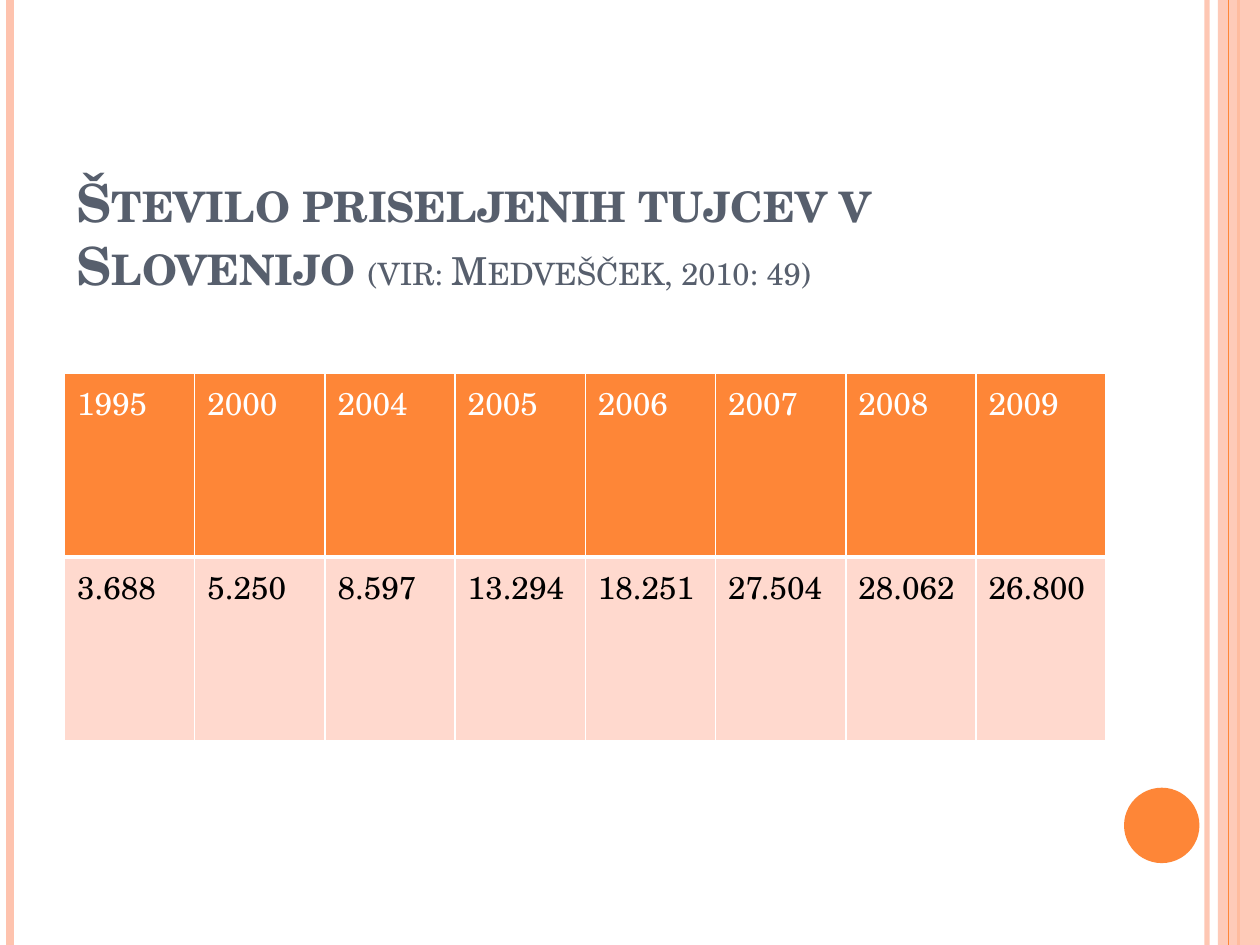
"""Build a slide with a table of foreigners who moved to Slovenia by year."""
import pptx
import pptx.dml.color
import pptx.enum.shapes
import pptx.enum.text
import pptx.oxml.ns
import pptx.util
from lxml import etree

Cm, Pt = pptx.util.Cm, pptx.util.Pt
RGBColor = pptx.dml.color.RGBColor
SHAPE = pptx.enum.shapes.MSO_SHAPE
qn = pptx.oxml.ns.qn

FONT = "TeX Gyre Schola"
ORANGE = RGBColor(0xFE, 0x86, 0x37)
PEACH = RGBColor(0xFE, 0xC3, 0xAE)
PALE = RGBColor(0xFF, 0xD9, 0xCE)
SLATE = RGBColor(0x57, 0x5F, 0x6D)
WHITE = RGBColor(0xFF, 0xFF, 0xFF)
BLACK = RGBColor(0, 0, 0)

TITLE = [
    ("Število priseljenih tujcev v \vSlovenijo ", 30, True),
    ("(vir: Medvešček, 2010: 49)", 22, False),
]
IMMIGRANTS = [
    ("1995", "3.688"), ("2000", "5.250"), ("2004", "8.597"), ("2005", "13.294"),
    ("2006", "18.251"), ("2007", "27.504"), ("2008", "28.062"), ("2009", "26.800"),
]
ROW_STYLES = [(ORANGE, WHITE, 3), (PALE, BLACK, 1)]
BACK_STRIPES = [(24.33, PEACH, 3, 93), (0.2, PEACH, 4.5, 100), (24.97, ORANGE, 1.5, 100)]
FRONT_STRIPES = [(24.77, ORANGE, 0.75, 100)]

WIDTH, HEIGHT = 25.4, 19.05
LEFT = 1.3
TABLE_TOP, TABLE_WIDTH, TABLE_HEIGHT = 7.53, 21, 7.4


def set_alpha(sp, percent):
    for color in sp._element.spPr.iter(qn("a:srgbClr")):
        etree.SubElement(color, qn("a:alpha"), val=str(percent * 1000))


def add_stripe(s, x, color, weight, alpha):
    sp = s.shapes.add_connector(
        pptx.enum.shapes.MSO_CONNECTOR.STRAIGHT, Cm(x), 0, Cm(x), Cm(HEIGHT))
    sp.line.color.rgb = color
    sp.line.width = Pt(weight)
    if alpha < 100:
        set_alpha(sp, alpha)
    etree.SubElement(sp._element.spPr, qn("a:effectLst"))


def add_filled(s, kind, x, y, w, h, color):
    sp = s.shapes.add_shape(kind, Cm(x), Cm(y), Cm(w), Cm(h))
    sp.shadow.inherit = False
    sp.fill.solid()
    sp.fill.fore_color.rgb = color
    sp.line.fill.background()
    return sp


def add_run(p, text, size, color, bold=False):
    start, *rest = text.split("\v")
    runs = [p.add_run()]
    runs[0].text = start
    for part in rest:
        p.add_line_break()
        runs.append(p.add_run())
        runs[-1].text = part
    for r in runs:
        r.font.name = FONT
        r.font.size = Pt(size)
        r.font.bold = bold
        r.font.color.rgb = color
    return runs


def add_title(s):
    sp = s.shapes.add_textbox(Cm(LEFT), Cm(2.92), Cm(20.75), Cm(3.18))
    tf = sp.text_frame
    tf.word_wrap = True
    tf.vertical_anchor = pptx.enum.text.MSO_ANCHOR.BOTTOM
    for text, size, bold in TITLE:
        for r in add_run(tf.paragraphs[0], text, size, SLATE, bold):
            r.font._element.set("cap", "small")


def set_borders(cell, bottom):
    tc_pr = cell._tc.get_or_add_tcPr()
    for tag, weight in (("lnL", 1), ("lnR", 1), ("lnT", 1), ("lnB", bottom)):
        ln = etree.SubElement(tc_pr, qn("a:" + tag), w=str(Pt(weight)))
        fill = etree.SubElement(ln, qn("a:solidFill"))
        etree.SubElement(fill, qn("a:srgbClr"), val=str(WHITE))


def add_immigrant_table(s):
    table = s.shapes.add_table(
        len(ROW_STYLES), len(IMMIGRANTS),
        Cm(LEFT), Cm(TABLE_TOP), Cm(TABLE_WIDTH), Cm(TABLE_HEIGHT)).table
    for col, values in enumerate(IMMIGRANTS):
        for row, (text, (fill, color, bottom)) in enumerate(zip(values, ROW_STYLES)):
            cell = table.cell(row, col)
            set_borders(cell, bottom)
            cell.fill.solid()
            cell.fill.fore_color.rgb = fill
            add_run(cell.text_frame.paragraphs[0], text, 18, color)


def main():
    prs = pptx.Presentation()
    prs.slide_width, prs.slide_height = Cm(WIDTH), Cm(HEIGHT)
    s = prs.slides.add_slide(prs.slide_layouts[6])
    for stripe in BACK_STRIPES:
        add_stripe(s, *stripe)
    band = add_filled(s, SHAPE.RECTANGLE, 24.55, 0, 0.85, HEIGHT, PEACH)
    set_alpha(band, 87)
    for stripe in FRONT_STRIPES:
        add_stripe(s, *stripe)
    add_filled(s, SHAPE.OVAL, 22.66, 15.88, 1.52, 1.52, ORANGE)
    add_title(s)
    add_immigrant_table(s)
    prs.save("out.pptx")


if __name__ == "__main__":
    main()
